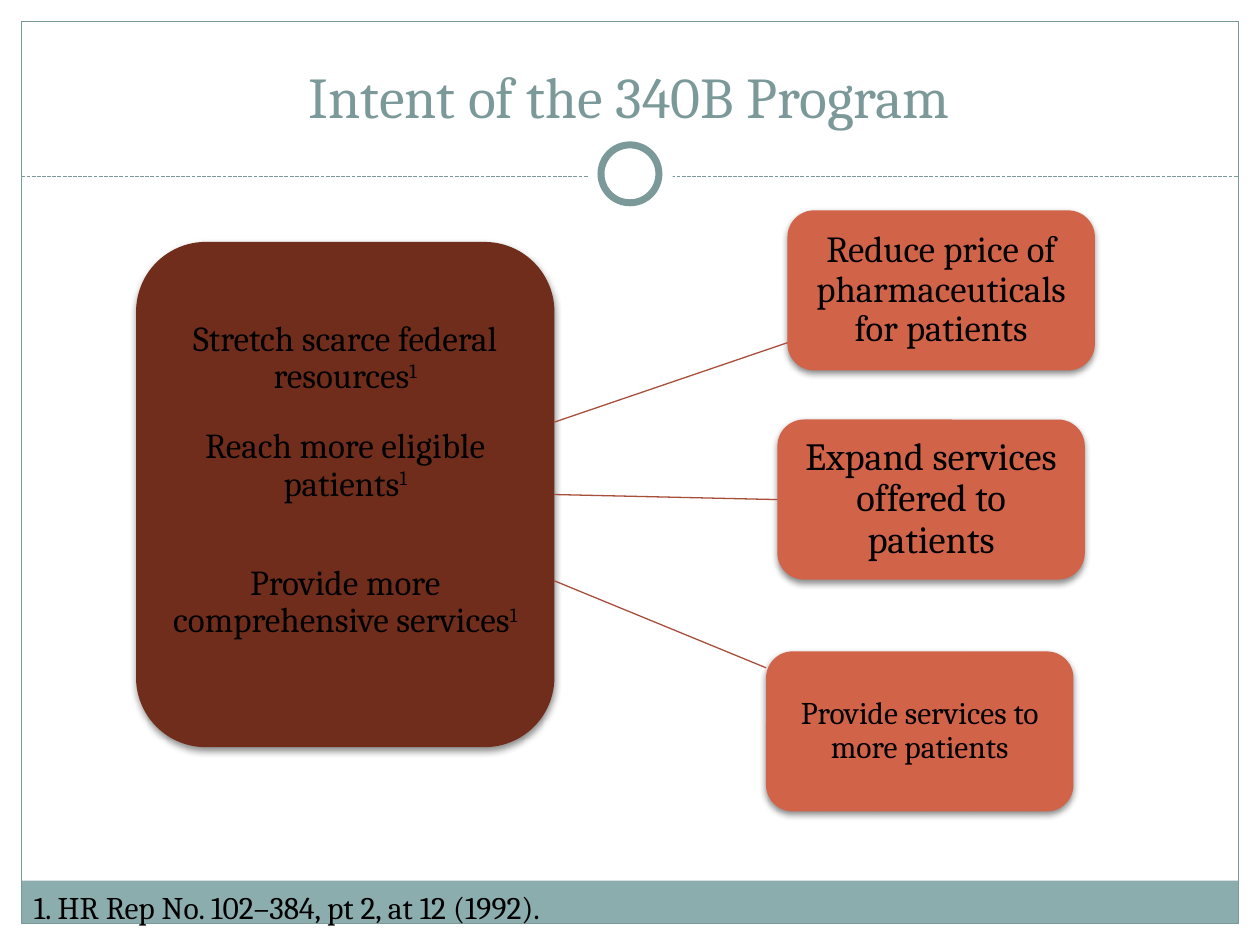
from lxml import etree
from pptx import Presentation
from pptx.dml.color import RGBColor
from pptx.enum.dml import MSO_LINE
from pptx.enum.shapes import MSO_CONNECTOR, MSO_SHAPE
from pptx.enum.text import MSO_ANCHOR, PP_ALIGN
from pptx.oxml import parse_xml
from pptx.oxml.ns import nsdecls, qn
from pptx.util import Inches, Pt

RECT, ROUND, OVAL = MSO_SHAPE.RECTANGLE, MSO_SHAPE.ROUNDED_RECTANGLE, MSO_SHAPE.OVAL
STRAIGHT, DASH = MSO_CONNECTOR.STRAIGHT, MSO_LINE.SQUARE_DOT
TOP, MIDDLE, BOTTOM = MSO_ANCHOR.TOP, MSO_ANCHOR.MIDDLE, MSO_ANCHOR.BOTTOM
LEFT, CENTER = PP_ALIGN.LEFT, PP_ALIGN.CENTER
SIDE_LEFT, SIDE_RIGHT = 1, 3

WHITE = RGBColor(0xFF, 0xFF, 0xFF)
BLACK = RGBColor(0x00, 0x00, 0x00)
TEAL = RGBColor(0x7C, 0x99, 0x9A)
BAR = RGBColor(0x8C, 0xAD, 0xAE)
BROWN = RGBColor(0x71, 0x2D, 0x1C)
ORANGE = RGBColor(0xD1, 0x63, 0x49)
LINK = RGBColor(0xA7, 0x4F, 0x3A)
FONT = "Cambria"

# Content
TITLE = "Intent of the 340B Program"
SOURCE = "1. HR Rep No. 102–384, pt 2, at 12 (1992)."
FOOTNOTE = "1"
INTENTS = [  # text, space after in points
    ("Stretch scarce federal resources", 18),
    ("Reach more eligible patients", 35),
    ("Provide more comprehensive services", 0),
]
GOALS = [  # text, size, left, top, link start y, link end y (None: joined at the sides)
    ("Reduce price of pharmaceuticals for patients", 21, 6.25, 1.67, 3.35, 2.72),
    ("Expand services offered to patients", 22, 6.17, 3.33, None, None),
    ("Provide services to more patients", 18, 6.08, 5.17, 4.61, 5.30),
]
PANEL = (1.08, 1.92, 3.32, 4.01)
GOAL_W, GOAL_H = 2.44, 1.27


def add_box(kind, box, fill=None, line=None, width=0.75):
    sp = s.shapes.add_shape(kind, *map(Inches, box))
    sp.shadow.inherit = False
    if fill is None:
        sp.fill.background()
    else:
        sp.fill.solid()
        sp.fill.fore_color.rgb = fill
    if line is None:
        sp.line.fill.background()
    else:
        sp.line.color.rgb = line
        sp.line.width = Pt(width)
    return sp


def add_card(box, fill):
    sp = add_box(ROUND, box, fill)
    sp._element.spPr.find(qn("a:effectLst")).append(parse_xml(
        f'<a:outerShdw {nsdecls("a")} blurRad="{Pt(4)}" dist="{Pt(2)}" dir="5400000" '
        'rotWithShape="0"><a:srgbClr val="000000"><a:alpha val="45000"/></a:srgbClr>'
        '</a:outerShdw>'))
    tf = sp.text_frame
    tf.margin_left = tf.margin_right = tf.margin_top = tf.margin_bottom = Inches(0.06)
    return sp


def add_line(x1, y1, x2, y2, color):
    line = s.shapes.add_connector(STRAIGHT, *map(Inches, (x1, y1, x2, y2)))
    line.line.color.rgb = color
    line.line.width = Pt(0.75)
    etree.SubElement(line._element.spPr, qn("a:effectLst"))
    return line


def write(tf, texts, size, color=BLACK, align=CENTER, anchor=MIDDLE, spacing=None):
    tf.word_wrap = True
    tf.vertical_anchor = anchor
    tf.text = "\n".join(texts)
    for p in tf.paragraphs:
        p.alignment = align
        p.line_spacing = spacing
        for r in p.runs:
            style(r, size, color)


def style(r, size, color):
    r.font.name = FONT
    r.font.size = Pt(size)
    r.font.color.rgb = color


def add_text(box, text, size, color, align, anchor):
    sp = s.shapes.add_textbox(*map(Inches, box))
    write(sp.text_frame, [text], size, color, align, anchor)


prs = Presentation()
prs.slide_width, prs.slide_height = Inches(10), Inches(7.5)
s = prs.slides.add_slide(prs.slide_layouts[6])

# Frame, footer bar and title divider
add_box(RECT, (0.17, 6.99, 9.66, 0.34), BAR)
add_box(RECT, (0.17, 0.17, 9.66, 7.16), line=TEAL)
add_line(0.17, 1.4, 9.83, 1.4, TEAL).line.dash_style = DASH
add_box(OVAL, (4.67, 1.05, 0.67, 0.67), WHITE)
add_box(OVAL, (4.77, 1.15, 0.46, 0.46), WHITE, TEAL, 4)
add_text((0.33, 0.25, 9.33, 0.83), TITLE, 33, TEAL, CENTER, BOTTOM)

# Intent panel
panel = add_card(PANEL, BROWN)
tf = panel.text_frame
tf.margin_bottom = Inches(0.28)
write(tf, [text for text, _ in INTENTS], 20, spacing=0.9)
for p, (_, gap) in zip(tf.paragraphs, INTENTS):
    p.space_after = Pt(gap)
    r = p.add_run()
    r.text = FOOTNOTE
    style(r, 20, BLACK)
    r._r.get_or_add_rPr().set("baseline", "30000")

# Goals, each linked to the panel
panel_right = PANEL[0] + PANEL[2]
for text, size, left, top, y1, y2 in GOALS:
    goal = add_card((left, top, GOAL_W, GOAL_H), ORANGE)
    write(goal.text_frame, [text], size, spacing=0.9)
    if y1 is None:
        link = add_line(panel_right, top, left, top, LINK)
        link.begin_connect(panel, SIDE_RIGHT)
        link.end_connect(goal, SIDE_LEFT)
    else:
        add_line(panel_right, y1, left, y2, LINK)

# Source note
add_text((0.17, 7, 7.33, 0.4), SOURCE, 18, BLACK, LEFT, TOP)

prs.save("out.pptx")
